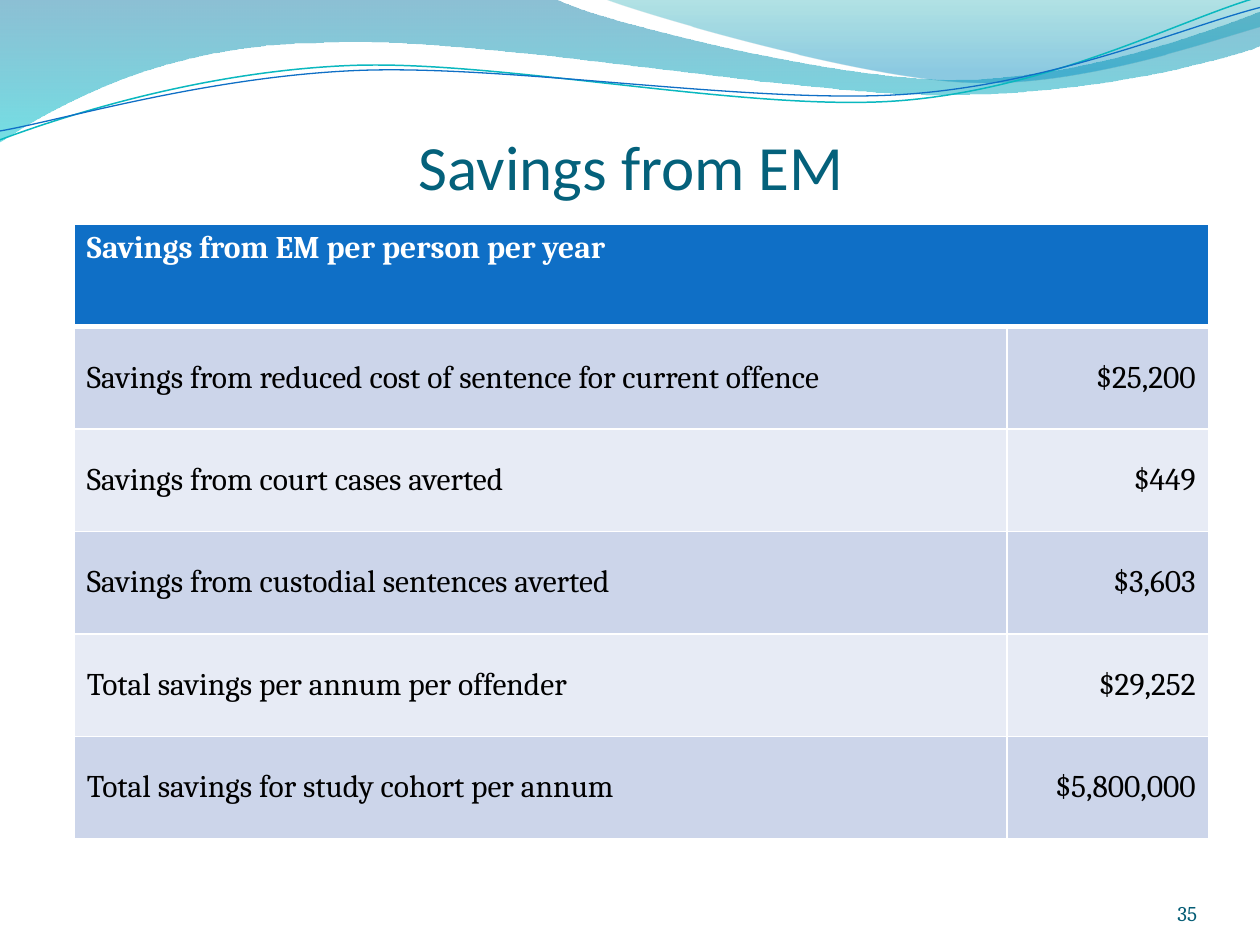
import math
import pptx
import pptx.util
import pptx.dml.color
import pptx.enum.text
import pptx.oxml
import pptx.oxml.ns
import lxml.etree

Inches = pptx.util.Inches
Pt = pptx.util.Pt
RGB = pptx.dml.color.RGBColor.from_string
ALIGN = pptx.enum.text.PP_ALIGN
ANCHOR = pptx.enum.text.MSO_ANCHOR
qn = pptx.oxml.ns.qn

COLORS = {
    "white": "FFFFFF", "black": "000000", "title": "04617B", "number": "045C75",
    "blue": "0F6FC6", "teal": "0AB8BF", "band_dark": "CCD5EA", "band_light": "E7EBF5",
    "wave_top": "0074A1", "wave_bottom": "00C6CF",
    "crest_top": "00A1A9", "crest_bottom": "008BBF",
}


def write_text(frame, text, size=18, font="Cambria", color="black", bold=False, align=ALIGN.LEFT):
    paragraph = frame.paragraphs[0]
    paragraph.alignment = align
    run = paragraph.add_run()
    run.text = text
    run.font.size = Pt(size)
    run.font.name = font
    run.font.bold = bold
    run.font.color.rgb = RGB(COLORS[color])


def draw_curve(shapes, start, steps, close):
    builder = shapes.build_freeform(Inches(start[0]), Inches(start[1]))
    points = [(Inches(x), Inches(y)) for step in steps for x, y in step]
    builder.add_line_segments(points, close=close)
    curve = builder.convert_to_shape()
    curve.shadow.inherit = False
    corners = iter(list(curve._element.iter(qn("a:lnTo"))))
    for step in steps:
        first, *others = [next(corners) for point in step]
        if others:
            bend = lxml.etree.Element(qn("a:cubicBezTo"))
            first.addprevious(bend)
            for corner in (first, *others):
                bend.append(corner[0])
                corner.getparent().remove(corner)
    return curve


prs = pptx.Presentation()
prs.slide_width, prs.slide_height = Inches(10), Inches(7.5)
slide = prs.slides.add_slide(prs.slide_layouts[5])
slide.background.fill.solid()
slide.background.fill.fore_color.rgb = RGB(COLORS["white"])

waves = [
    ((0, -0.01),
     [[(4.4, -0.01)],
      [(4.76, 0.17), (6.64, 0.63), (7.58, 0.63)],
      [(8.53, 0.63), (9.58, 0.26), (10, 0.09)],
      [(10.01, 0.36)],
      [(9.83, 0.44), (8.7, 0.76), (7.46, 0.75)],
      [(6.22, 0.75), (3.82, 0.28), (2.57, 0.34)],
      [(1.29, 0.35), (0.46, 0.83), (-0.01, 1.13)]],
     [(0, "wave_top", 45), (1, "wave_bottom", 55)]),
    ((4.79, -0.01),
     [[(5.09, 0.11), (6.82, 0.62), (7.69, 0.65)],
      [(8.56, 0.69), (9.61, 0.32), (10, 0.21)],
      [(10, 0)]],
     [(0, "crest_top", 30), (0.8, "crest_bottom", 45)]),
]
for start, steps, stops in waves:
    wave = draw_curve(slide.shapes, start, steps, True)
    wave.line.fill.background()
    wave.fill.gradient()
    wave.fill.gradient_angle = 270
    for stop, (position, color, opacity) in zip(wave.fill.gradient_stops, stops):
        stop.position = position
        stop.color.rgb = RGB(COLORS[color])
    for tint, (position, color, opacity) in zip(wave._element.spPr.iter(qn("a:srgbClr")), stops):
        lxml.etree.SubElement(tint, qn("a:alpha"), val=str(opacity * 1000))

ripples = [
    ([[(0, 1.11)],
      [(0.48, 0.93), (1.58, 0.57), (2.77, 0.52)],
      [(3.95, 0.47), (5.93, 0.89), (7.13, 0.8)],
      [(8.33, 0.71), (9.38, 0.15), (9.98, -0.02)]], (4.99, 0.57), "teal", 0.85),
    ([[(0, 1.04)],
      [(0.47, 0.96), (1.64, 0.61), (2.83, 0.56)],
      [(4.03, 0.51), (5.97, 0.83), (7.17, 0.75)],
      [(8.36, 0.67), (9.41, 0.21), (10, 0.06)]], (5, 0.59), "blue", 0.75),
]
TILT = 2.7
cos, sin = math.cos(math.radians(TILT)), math.sin(math.radians(TILT))
ripple_group = slide.shapes.add_group_shape()
for steps, (cx, cy), color, width in ripples:
    (start,), *level = [[(cx + (x - cx) * cos - (y - cy) * sin, cy + (x - cx) * sin + (y - cy) * cos)
                         for x, y in step] for step in steps]
    ripple = draw_curve(ripple_group.shapes, start, level, False)
    ripple.rotation = 360 - TILT
    ripple.fill.background()
    ripple.line.color.rgb = RGB(COLORS[color])
    ripple.line.width = Pt(width)

heading = slide.shapes.title
slide.shapes._spTree.append(heading._element)
heading.left, heading.top, heading.width, heading.height = [Inches(v) for v in (0.51, 0.36, 9, 1.25)]
heading_frame = heading.text_frame
heading_frame.auto_size = pptx.enum.text.MSO_AUTO_SIZE.NONE
heading_frame.word_wrap = True
heading_frame.vertical_anchor = ANCHOR.BOTTOM
heading_frame.margin_left = heading_frame.margin_right = heading_frame.margin_bottom = 0
heading_frame.margin_top = Inches(0.05)
write_text(heading_frame, "Savings from EM", size=36, font="Calibri", color="title", align=ALIGN.CENTER)

savings = [
    ("Savings from EM per person per year", ""),
    ("Savings from reduced cost of sentence for current offence", "$25,200"),
    ("Savings from court cases averted", "$449"),
    ("Savings from custodial sentences averted", "$3,603"),
    ("Total savings per annum per offender", "$29,252"),
    ("Total savings for study cohort per annum", "$5,800,000"),
]
table = slide.shapes.add_table(len(savings), 2, Inches(0.59), Inches(1.78), Inches(9), Inches(4.88)).table
table.columns[0].width, table.columns[1].width = Inches(7.4), Inches(1.6)
for r, row in enumerate(savings):
    for c, text in enumerate(row):
        cell = table.cell(r, c)
        properties = cell._tc.get_or_add_tcPr()
        for side in "LRTB":
            thick = (r, side) in [(0, "B"), (1, "T")]
            border = lxml.etree.SubElement(properties, qn("a:ln" + side), w=str(Pt(3 if thick else 1)))
            paint = lxml.etree.SubElement(border, qn("a:solidFill"))
            lxml.etree.SubElement(paint, qn("a:srgbClr"), val=COLORS["white"])
        cell.fill.solid()
        fill = "blue" if r == 0 else "band_dark" if r % 2 else "band_light"
        cell.fill.fore_color.rgb = RGB(COLORS[fill])
        cell.vertical_anchor = ANCHOR.MIDDLE if r else ANCHOR.TOP
        if text:
            write_text(cell.text_frame, text, color="black" if r else "white", bold=r == 0,
                       align=ALIGN.RIGHT if c else ALIGN.LEFT)
table.cell(0, 0).merge(table.cell(0, 1))

page_number = slide.shapes.add_textbox(Inches(8.67), Inches(6.95), Inches(0.83), Inches(0.4)).text_frame
page_number.word_wrap = True
page_number.vertical_anchor = ANCHOR.BOTTOM
page_number.margin_left = page_number.margin_right = page_number.margin_top = page_number.margin_bottom = 0
write_text(page_number, "35", size=12, color="number", align=ALIGN.RIGHT)

prs.save("out.pptx")
